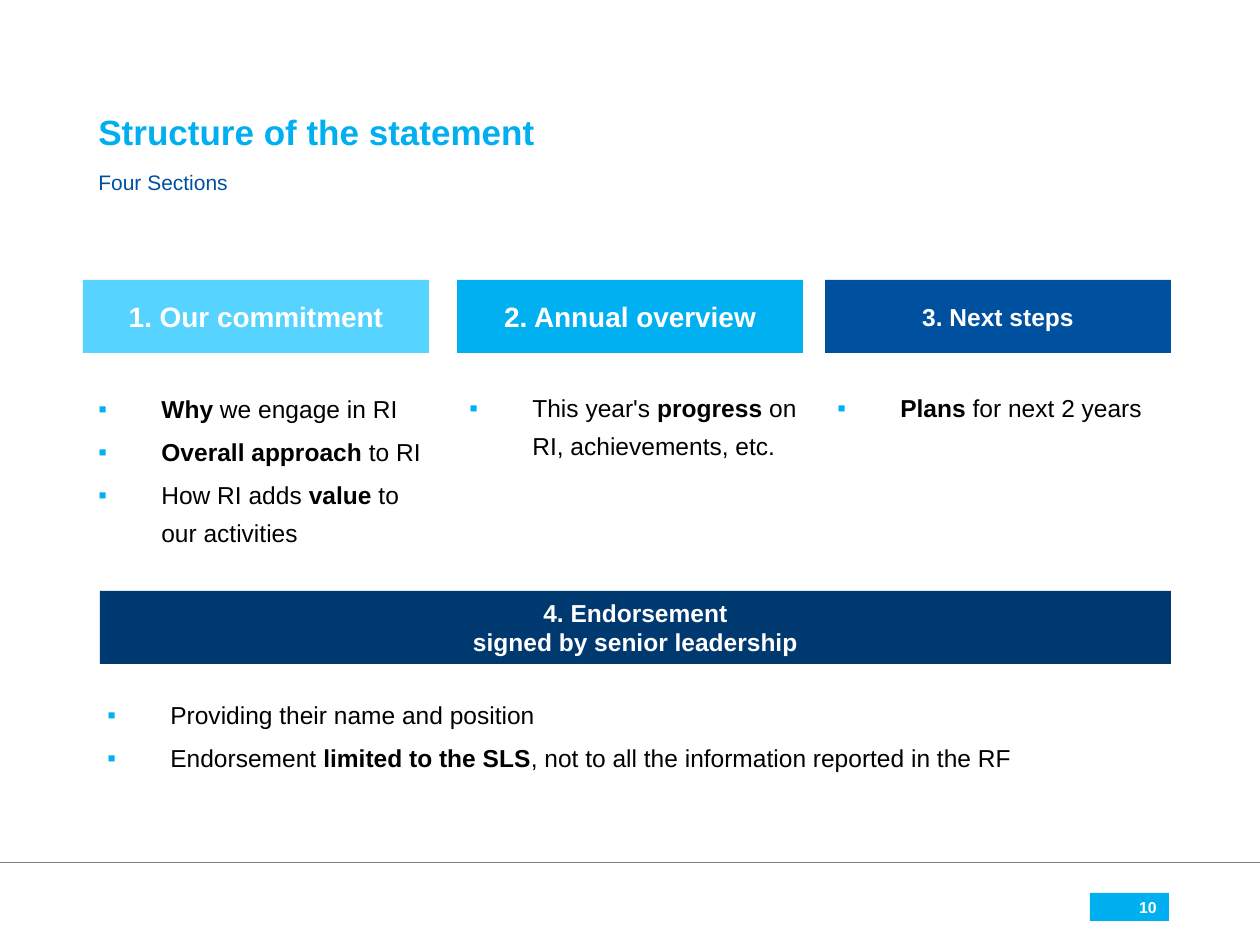
from lxml import etree
from pptx import Presentation, util as u
from pptx.dml.color import RGBColor
from pptx.enum import shapes, text
from pptx.oxml.ns import qn

# Content: a "*" pair marks bold words
SKY, NAVY, BLACK, WHITE = "00B0F0", "0050A0", "000000", "FFFFFF"
ACCENT, RULE = "00AFF0", "808080"
HEADINGS = [  # words, size, colour, (left, top, width, height)
    (["Structure of the statement"], 20, ACCENT, (86, 89, 1084, 70), True),
    (["Four Sections"], 12, NAVY, (86, 166, 1084, 58), False),
]
BARS = [  # lines, size, fill, (left, top, width, height)
    (["1. Our commitment"], 16, "57D3FF", (83, 280, 346, 73)),
    (["2. Annual overview"], 16, SKY, (457, 280, 346, 73)),
    (["3. Next steps"], 14, NAVY, (825, 280, 346, 73)),
    (["4. Endorsement", "signed by senior leadership"], 14, "003870", (100, 591, 1071, 73)),
]
BULLETS = [  # items, (left, top, width, height)
    (["*Why* we engage in RI", "*Overall approach *to RI",
      "How RI adds *value* to our activities"], (86, 379, 365, 192)),
    (["This year's *progress* on RI, achievements, etc."], (457, 378, 368, 192)),
    (["*Plans* for next 2 years"], (825, 378, 368, 192)),
    (["Providing their name and position",
      "Endorsement *limited to the SLS*, not to all the information reported in the RF"],
     (95, 685, 1071, 122)),
]
PAGE_NUMBER = (["10"], 9, ACCENT, (1090, 893, 79, 28))


def px(value):
    return u.Emu(round(value * 914400 / 126))


def color(value):
    return RGBColor.from_string(value)


def set_font(font, size, fill, bold=None):
    font.name, font.size, font.bold = "Arial", u.Pt(size), bold
    font.color.rgb = color(fill)


def paragraphs(frame, lines):
    """Yield one paragraph of the frame for each line."""
    for index, line in enumerate(lines):
        yield (frame.add_paragraph() if index else frame.paragraphs[0]), line


def add_text_box(slide, box):
    frame = slide.shapes.add_textbox(*map(px, box)).text_frame
    frame.word_wrap = True
    return frame


def add_heading(slide, lines, size, fill, box, bold):
    frame = add_text_box(slide, box)
    frame.vertical_anchor = text.MSO_ANCHOR.BOTTOM if bold else text.MSO_ANCHOR.TOP
    for paragraph, line in paragraphs(frame, lines):
        paragraph.text = line
        paragraph.line_spacing = 0.9
        set_font(paragraph.font, size, fill, bold)


def add_bar(slide, lines, size, fill, box, align=text.PP_ALIGN.CENTER):
    shape = slide.shapes.add_shape(shapes.MSO_SHAPE.RECTANGLE, *map(px, box))
    shape.shadow.inherit = False
    shape.fill.solid()
    shape.fill.fore_color.rgb = color(fill)
    shape.line.fill.background()
    shape.text_frame.vertical_anchor = text.MSO_ANCHOR.MIDDLE
    for paragraph, line in paragraphs(shape.text_frame, lines):
        paragraph.text = line
        paragraph.alignment = align
        set_font(paragraph.font, size, WHITE, True)


def add_bullet(paragraph):
    properties = paragraph._p.get_or_add_pPr()
    properties.set("marL", str(u.Inches(0.5)))
    properties.set("indent", str(-u.Inches(0.5)))
    bullet_color = etree.SubElement(properties, qn("a:buClr"))
    etree.SubElement(bullet_color, qn("a:srgbClr"), val=SKY)
    etree.SubElement(properties, qn("a:buFont"), typeface="Arial")
    etree.SubElement(properties, qn("a:buChar"), char="▪")


def add_bullets(slide, items, box):
    frame = add_text_box(slide, box)
    for index, (paragraph, item) in enumerate(paragraphs(frame, items)):
        add_bullet(paragraph)
        paragraph.line_spacing = 1.3
        if index:
            paragraph.space_before = u.Pt(2.8)
        set_font(paragraph.font, 14, BLACK)
        for position, words in enumerate(item.split("*")):
            if words:
                run = paragraph.add_run()
                run.text = words
                run.font.bold = position % 2 == 1


def add_rule(slide, y):
    line = slide.shapes.add_connector(
        shapes.MSO_CONNECTOR.STRAIGHT, px(0), px(y), px(1260), px(y))
    line.line.color.rgb = color(RULE)
    line.line.width = u.Pt(0.5)
    etree.SubElement(line._element.spPr, qn("a:effectLst"))


def main():
    presentation = Presentation()
    presentation.slide_width, presentation.slide_height = px(1260), px(945)
    slide = presentation.slides.add_slide(presentation.slide_layouts[6])
    # Footer
    add_rule(slide, 862)
    add_bar(slide, *PAGE_NUMBER, align=text.PP_ALIGN.RIGHT)
    # Title and subtitle
    for heading in HEADINGS:
        add_heading(slide, *heading)
    # Four sections
    for bar, bullets in zip(BARS, BULLETS):
        add_bullets(slide, *bullets)
        add_bar(slide, *bar)
    presentation.save("out.pptx")


if __name__ == "__main__":
    main()
